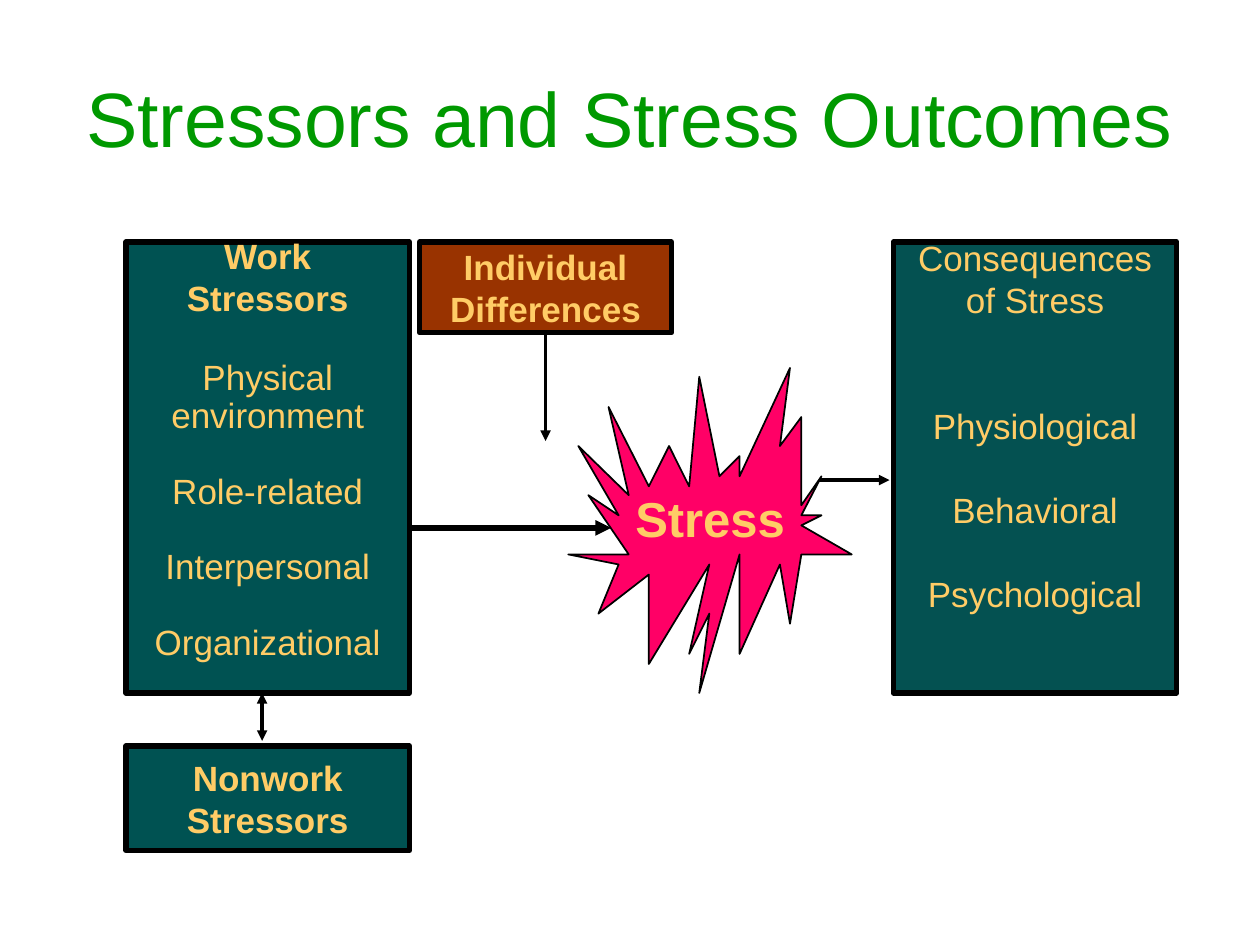
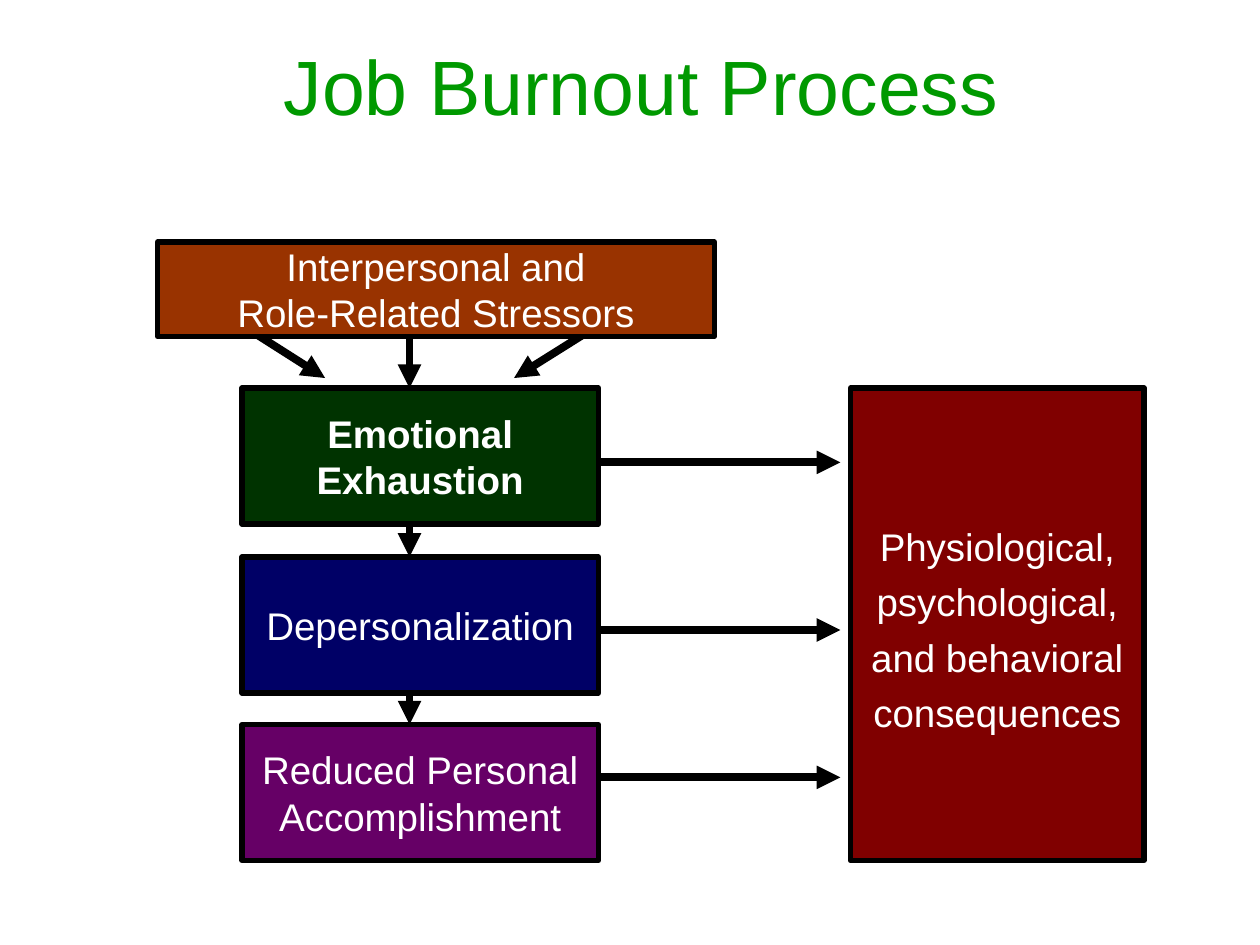
from lxml import etree
from pptx import Presentation
from pptx import util as u
from pptx.dml.color import RGBColor
from pptx.enum import shapes, text
from pptx.oxml.ns import qn

FONT = "Arial"
BLACK, WHITE, GREEN, GOLD = "000000", "FFFFFF", "009900", "FFCC66"
TEAL, RUST, PINK = "005252", "993300", "FF0066"

BURST = [
    (4.99, 3.93), (4.83, 3.23), (5.15, 3.86), (5.31, 3.54), (5.47, 3.86),
    (5.55, 2.99), (5.71, 3.78), (5.87, 3.62), (5.87, 3.78), (6.27, 2.92),
    (6.19, 3.54), (6.36, 3.31), (6.36, 4.01), (6.52, 3.78), (6.36, 4.09),
    (6.52, 4.09), (6.36, 4.17), (6.76, 4.4), (6.36, 4.4), (6.27, 4.95),
    (6.19, 4.48), (5.87, 5.19), (5.87, 4.4), (5.55, 5.5), (5.63, 4.87),
    (5.47, 5.19), (5.63, 4.48), (5.15, 5.27), (5.15, 4.56), (4.75, 4.87),
    (4.91, 4.48), (4.51, 4.4), (4.99, 4.4), (4.67, 3.93), (4.91, 4.09),
    (4.59, 3.54),
]


def rgb(color):
    return RGBColor.from_string(color)


def inches(values):
    return [u.Inches(v) for v in values]


class Deck:
    def __init__(self):
        self.prs = Presentation()
        self.prs.slide_width, self.prs.slide_height = inches((10, 7.5))
        self.s = None
        self.size, self.color = 20, GOLD

    def slide(self, title, at, size, color):
        """Add a titled slide and set the text style of its boxes."""
        self.s = self.prs.slides.add_slide(self.prs.slide_layouts[5])
        self.size, self.color = size, color
        sp = self.s.shapes.title
        sp.left, sp.top, sp.width, sp.height = inches(at)
        tf = sp.text_frame
        tf.auto_size = text.MSO_AUTO_SIZE.NONE
        tf.vertical_anchor = text.MSO_ANCHOR.MIDDLE
        self.add_lines(tf, [title], size=44, color=GREEN)

    def add_lines(self, tf, lines, size=None, color=None, bold=False, before=0, spacing=None):
        """Append one centred paragraph for each line."""
        for line in lines:
            p = tf.paragraphs[0]
            if p.runs:
                p = tf.add_paragraph()
            p.alignment = text.PP_ALIGN.CENTER
            p.space_before = u.Pt(before)
            if spacing:
                p.line_spacing = spacing
            r = p.add_run()
            r.text = line
            r.font.name = FONT
            r.font.size = u.Pt(size or self.size)
            r.font.bold = bold
            r.font.color.rgb = rgb(color or self.color)

    def paint(self, sp, fill, width):
        sp.shadow.inherit = False
        sp.fill.solid()
        sp.fill.fore_color.rgb = rgb(fill)
        sp.line.color.rgb = rgb(BLACK)
        sp.line.width = u.Pt(width)

    def box(self, at, fill, lines, bottom=0.05, **style):
        sp = self.s.shapes.add_shape(shapes.MSO_SHAPE.RECTANGLE, *inches(at))
        self.paint(sp, fill, 3)
        tf = sp.text_frame
        tf.word_wrap = False
        tf.vertical_anchor = text.MSO_ANCHOR.MIDDLE
        tf.margin_bottom = u.Inches(bottom)
        self.add_lines(tf, lines, **style)
        return sp

    def outline(self, points, fill):
        first, *rest = [inches(point) for point in points]
        builder = self.s.shapes.build_freeform(*first, scale=1.0)
        builder.add_line_segments(rest, close=True)
        self.paint(builder.convert_to_shape(), fill, 1)

    def label(self, at, line, **style):
        tf = self.s.shapes.add_textbox(*inches(at)).text_frame
        tf.word_wrap = False
        self.add_lines(tf, [line], **style)

    def arrow(self, start, end, width, both=False):
        c = self.s.shapes.add_connector(
            shapes.MSO_CONNECTOR.STRAIGHT, *inches(start + end))
        c.line.color.rgb = rgb(BLACK)
        c.line.width = u.Pt(width)
        ln = c.line._get_or_add_ln()
        for tag in ("a:headEnd", "a:tailEnd") if both else ("a:tailEnd",):
            etree.SubElement(ln, qn(tag), type="triangle")
        etree.SubElement(c._element.spPr, qn("a:effectLst"))
        return c


def stress_outcomes(deck):
    deck.slide("Stressors and Stress Outcomes", (0.5, 0.3, 9, 1.25), 20, GOLD)
    top, width, height = 1.92, 2.25, 3.58

    deck.outline(BURST, PINK)
    deck.label((4.94, 3.83, 1.39, 0.56), "Stress", size=28, bold=True)
    deck.arrow((3.25, 4.19), (4.85, 4.19), 3)

    work = deck.box((1, top, width, height), TEAL, ["Work", "Stressors"],
                    bottom=0.35, bold=True).text_frame
    deck.add_lines(work, ["Physical"], before=24, spacing=0.9)
    deck.add_lines(work, ["environment"], spacing=0.9)
    deck.add_lines(work, ["Role-related", "Interpersonal", "Organizational"],
                   before=21.6, spacing=0.9)

    deck.arrow((2.08, 5.5), (2.08, 5.88), 2, both=True)
    deck.box((1, 5.92, width, 0.83), TEAL, ["Nonwork", "Stressors"], bold=True)

    differences = deck.box((3.33, top, 2, 0.72), RUST,
                           ["Individual", "Differences"], bold=True)
    deck.arrow((4.33, 2.64), (4.33, 3.5), 2).begin_connect(differences, 2)

    deck.arrow((6.5, 3.81), (7.06, 3.81), 2)
    outcomes = deck.box((7.09, top, width, height), "045151",
                        ["Consequences", "of Stress"], bottom=0.72).text_frame
    deck.add_lines(outcomes, ["Physiological"], before=48)
    deck.add_lines(outcomes, ["Behavioral", "Psychological"], before=24)


def burnout_process(deck):
    deck.slide("Job Burnout Process", (0.59, 0.05, 9, 1.25), 22, WHITE)
    left, width, height, weight = 1.92, 2.83, 1.08, 4.5
    right = left + width

    stages = [  # top, arrow start above, arrow height to the right, fill, lines, bold
        (3.08, 2.67, 3.67, "003300", ["Emotional", "Exhaustion"], True),
        (4.42, 4.17, 5, "000066", ["Depersonalization"], False),
        (5.75, 5.5, 6.17, "660066", ["Reduced Personal", "Accomplishment"], False),
    ]
    for top, above, level, fill, lines, bold in stages:
        deck.box((left, top, width, height), fill, lines, bold=bold)
        deck.arrow((3.25, above), (3.25, top), weight)
        deck.arrow((right, level), (6.67, level), weight)

    deck.box((6.75, 3.08, 2.33, 3.75), "800000",
             ["Physiological,", "psychological,", "and behavioral", "consequences"],
             spacing=1.2)
    for start, end in ((right, 4.08), (left, 2.58)):
        deck.arrow((start, 2.58), (end, 3), weight)
    deck.box((1.25, 1.92, 4.42, 0.75), RUST,
             ["Interpersonal and", "Role-Related Stressors"])


def main():
    deck = Deck()
    stress_outcomes(deck)
    burnout_process(deck)
    deck.prs.save("out.pptx")


if __name__ == "__main__":
    main()
